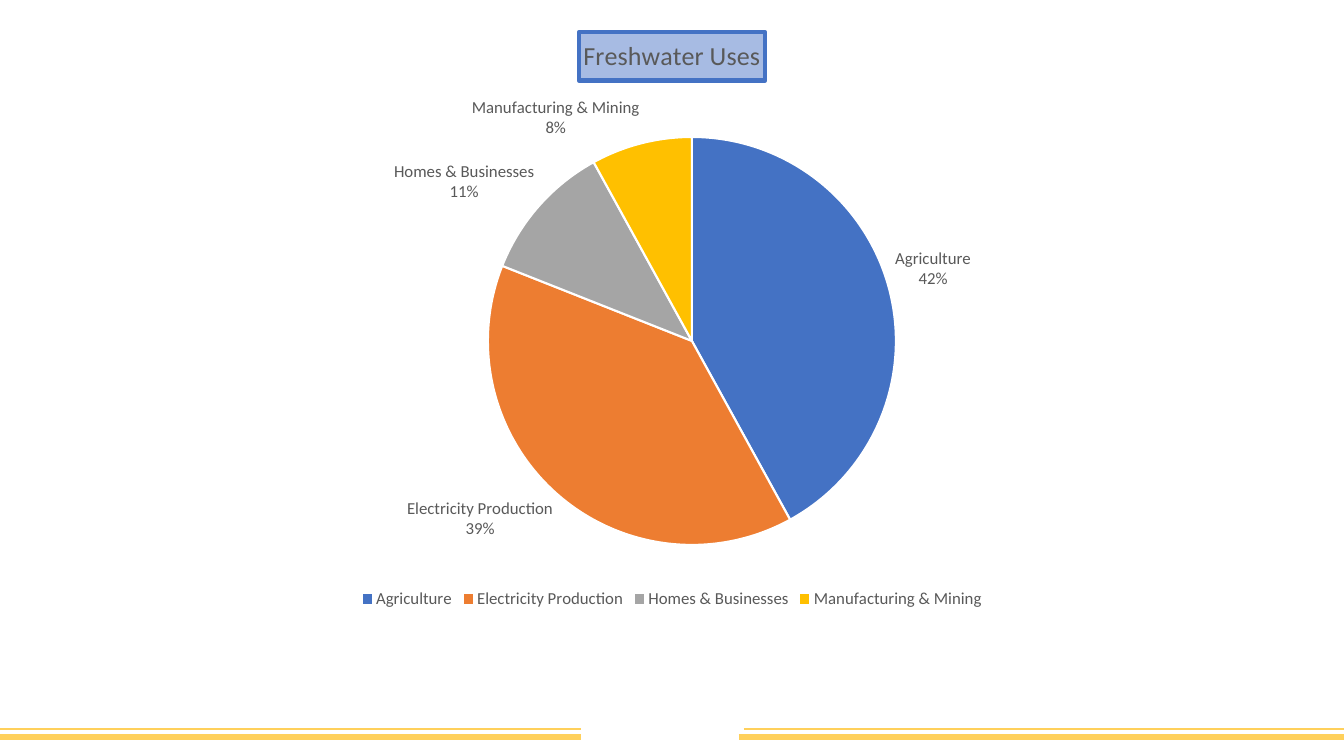
from dataclasses import dataclass

from lxml import etree
from pptx import Presentation
from pptx.chart.data import CategoryChartData
from pptx.dml.color import RGBColor
from pptx.enum import chart as charts, shapes
from pptx.oxml import parse_xml
from pptx.oxml.ns import nsdecls, qn
from pptx.util import Pt

EMU_PER_PX = 914400 / 100.8


@dataclass(frozen=True)
class Theme:
    font: str = "Calibri"
    text: str = "595959"
    white: str = "FFFFFF"
    band: str = "FFD05B"
    title_fill: str = "A7BBE3"
    title_border: str = "4472C4"
    slices: tuple = ("4472C4", "ED7D31", "A5A5A5", "FFC000")
    title_size: float = 18.6
    label_size: float = 12


THEME = Theme()
TITLE = "Freshwater Uses"
USES = {
    "Agriculture": 42,
    "Electricity Production": 39,
    "Homes & Businesses": 11,
    "Manufacturing & Mining": 8,
}
CHART_BOX = (224, 15, 896, 598)
PIE_BOX = (488, 137, 408, 408)
# left end, right end, height on the slide, line width in points
BAND_LINES = (
    (739, 1344, 737, 4.5),
    (-1, 581, 737, 4.5),
    (-1, 581, 729, 1.5),
    (744, 1344, 729, 1.5),
)


def px(length):
    return round(length * EMU_PER_PX)


def set_attributes(target, values):
    for name, value in values.items():
        setattr(target, name, value)


def style_font(font, size):
    set_attributes(font, {"name": THEME.font, "size": Pt(size), "bold": False})
    font.color.rgb = RGBColor.from_string(THEME.text)


def paint_fill(fill, color):
    fill.solid()
    fill.fore_color.rgb = RGBColor.from_string(color)


def paint_line(line, color, width):
    line.color.rgb = RGBColor.from_string(color)
    line.width = Pt(width)


def add_band_line(slide, left, right, y, width):
    line = slide.shapes.add_connector(
        shapes.MSO_CONNECTOR.STRAIGHT, px(left), px(y), px(right), px(y))
    paint_line(line.line, THEME.band, width)
    etree.SubElement(line.element.spPr, qn("a:effectLst"))


def style_title(chart):
    chart.has_title = True
    title = chart.chart_title
    title.include_in_layout = False
    title.text_frame.text = TITLE
    style_font(title.text_frame.paragraphs[0].runs[0].font, THEME.title_size)
    paint_fill(title.format.fill, THEME.title_fill)
    paint_line(title.format.line, THEME.title_border, 3)


def style_legend(chart):
    chart.has_legend = True
    set_attributes(chart.legend, {
        "position": charts.XL_LEGEND_POSITION.BOTTOM,
        "include_in_layout": False,
    })
    style_font(chart.legend.font, THEME.label_size)


def style_labels(plot):
    plot.has_data_labels = True
    set_attributes(plot.data_labels, {
        "show_percentage": True,
        "show_category_name": True,
        "show_value": False,
        "position": charts.XL_LABEL_POSITION.OUTSIDE_END,
    })
    style_font(plot.data_labels.font, THEME.label_size)


def place_pie(chart):
    """Fix the pie's place as fractions of the chart frame."""
    left, top, width, height = CHART_BOX
    pie_left, pie_top, pie_width, pie_height = PIE_BOX
    fractions = {
        "x": (pie_left - left) / width,
        "y": (pie_top - top) / height,
        "w": pie_width / width,
        "h": pie_height / height,
    }
    places = "".join(f'<c:{name} val="{value:.4f}"/>' for name, value in fractions.items())
    layout = parse_xml(
        f'<c:layout {nsdecls("c")}><c:manualLayout><c:layoutTarget val="inner"/>'
        f'<c:xMode val="edge"/><c:yMode val="edge"/>{places}</c:manualLayout></c:layout>')
    plot_area = chart.element.find(".//" + qn("c:plotArea"))
    for automatic in plot_area.findall(qn("c:layout")):
        plot_area.remove(automatic)
    plot_area.insert(0, layout)


def add_uses_pie(slide):
    data = CategoryChartData()
    data.categories = list(USES)
    data.add_series(TITLE, list(USES.values()))
    chart = slide.shapes.add_chart(
        charts.XL_CHART_TYPE.PIE, *map(px, CHART_BOX), data).chart
    style_font(chart.font, THEME.label_size)
    style_title(chart)
    style_legend(chart)
    plot = chart.plots[0]
    plot.vary_by_categories = True
    style_labels(plot)
    for index, color in enumerate(THEME.slices):
        piece = plot.series[0].points[index].format
        paint_fill(piece.fill, color)
        paint_line(piece.line, THEME.white, 1.5)
    place_pie(chart)


def main():
    presentation = Presentation()
    set_attributes(presentation, {"slide_width": px(1344), "slide_height": px(756)})
    slide = presentation.slides.add_slide(presentation.slide_layouts[6])
    paint_fill(slide.background.fill, THEME.white)
    for band_line in BAND_LINES:
        add_band_line(slide, *band_line)
    add_uses_pie(slide)
    presentation.save("out.pptx")


if __name__ == "__main__":
    main()
